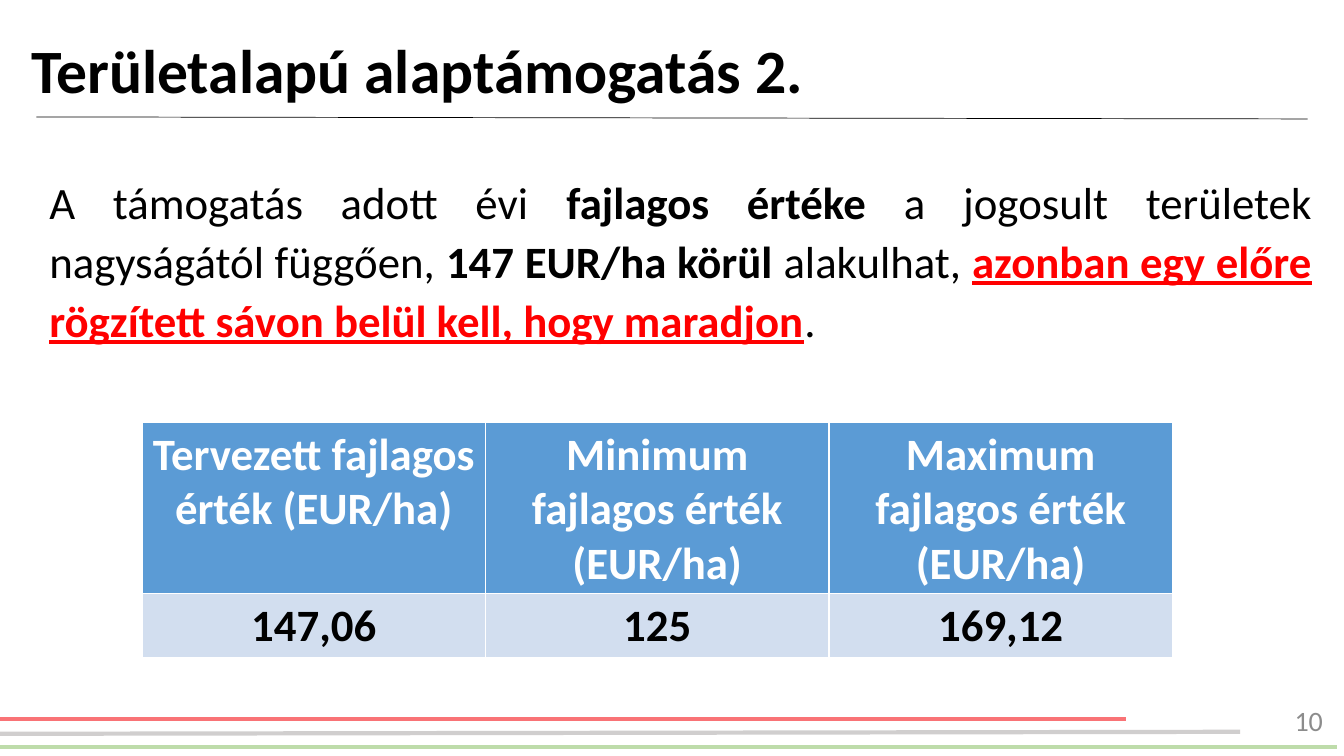
from typing import Any, NamedTuple

import lxml.etree
import pptx
import pptx.dml.color
import pptx.enum.shapes
import pptx.enum.text
import pptx.oxml.ns
import pptx.util
from pptx.util import Inches

COLORS = {
    "black": "000000", "white": "FFFFFF", "red": "FF0000", "grey": "8C8C8C",
    "red_stripe": "F97376", "green_stripe": "BEDCAA", "grey_stripe": "D0CECE",
    "header": "5B9BD5", "value": "D2DEEF",
}
ALIGN = pptx.enum.text.PP_ALIGN
ANCHOR = pptx.enum.text.MSO_ANCHOR


class Rule(NamedTuple):
    start: tuple[float, float]
    end: tuple[float, float]
    color: str
    width: float


class Run(NamedTuple):
    text: str
    size: float
    color: str = "black"
    bold: bool = False
    underline: bool = False


RULES = [
    Rule((0, 7.13), (11.17, 7.13), "red_stripe", 3),
    Rule((0, 7.41), (13.26, 7.41), "green_stripe", 3),
    Rule((0, 7.28), (12.3, 7.26), "grey_stripe", 3),
    Rule((0.36, 1.16), (12.97, 1.18), "black", 0.5),
]
BODY_RUNS = [
    Run("A támogatás adott évi ", 32),
    Run("fajlagos értéke ", 32, bold=True),
    Run("a jogosult területek nagyságától függően, ", 32),
    Run("147 EUR/ha körül", 32, bold=True),
    Run(" alakulhat, ", 32),
    Run("azonban egy előre rögzített sávon belül kell, hogy maradjon", 32, "red", True, True),
    Run(".", 32),
]
TABLE_ROWS = [
    ["Tervezett fajlagos érték (EUR/ha)", "Minimum fajlagos érték (EUR/ha)",
     "Maximum fajlagos érték (EUR/ha)"],
    ["147,06", "125", "169,12"],
]
ROW_HEIGHTS = [1.7, 0.63]
ROW_STYLES = [("header", "white"), ("value", "black")]


def rgb(name: str) -> pptx.dml.color.RGBColor:
    return pptx.dml.color.RGBColor.from_string(COLORS[name])


def apply(target: Any, values: dict[str, Any]) -> None:
    for name, value in values.items():
        setattr(target, name, value)


def write(text_frame: Any, runs: list[Run], paragraph_format: dict[str, Any]) -> None:
    paragraph = text_frame.paragraphs[0]
    apply(paragraph, paragraph_format)
    for item in runs:
        run = paragraph.add_run()
        run.text = item.text
        apply(run.font, {"name": "Calibri", "size": pptx.util.Pt(item.size),
                         "bold": item.bold, "underline": item.underline})
        run.font.color.rgb = rgb(item.color)


def draw_rule(slide: Any, rule: Rule) -> None:
    connector = slide.shapes.add_connector(
        pptx.enum.shapes.MSO_CONNECTOR.STRAIGHT,
        *(Inches(value) for value in rule.start + rule.end))
    connector.line.color.rgb = rgb(rule.color)
    connector.line.width = pptx.util.Pt(rule.width)
    lxml.etree.SubElement(connector._element.spPr, pptx.oxml.ns.qn("a:effectLst"))


def add_title(slide: Any, text: str) -> None:
    title = slide.shapes.title
    apply(title, {"left": Inches(0.21), "top": Inches(0),
                  "width": Inches(13), "height": Inches(1.45)})
    apply(title.text_frame, {"vertical_anchor": ANCHOR.MIDDLE, "word_wrap": True,
                             "auto_size": pptx.enum.text.MSO_AUTO_SIZE.NONE})
    write(title.text_frame, [Run(text, 44, bold=True)],
          {"alignment": ALIGN.LEFT, "line_spacing": 0.9})


def add_text(slide: Any, box: tuple[float, float, float, float], runs: list[Run],
             anchor: Any, paragraph_format: dict[str, Any]) -> None:
    shape = slide.shapes.add_textbox(*(Inches(value) for value in box))
    apply(shape.text_frame, {"word_wrap": True, "vertical_anchor": anchor})
    write(shape.text_frame, runs, paragraph_format)


def add_value_table(slide: Any) -> None:
    table = slide.shapes.add_table(
        len(TABLE_ROWS), len(TABLE_ROWS[0]), Inches(1.41), Inches(4.19),
        Inches(10.22), Inches(sum(ROW_HEIGHTS))).table
    for row, texts, height, (fill, color) in zip(
            table.rows, TABLE_ROWS, ROW_HEIGHTS, ROW_STYLES):
        row.height = Inches(height)
        for cell, text in zip(row.cells, texts):
            cell.fill.solid()
            cell.fill.fore_color.rgb = rgb(fill)
            write(cell.text_frame, [Run(text, 32, color, True)], {"alignment": ALIGN.CENTER})


def main() -> None:
    presentation = pptx.Presentation()
    apply(presentation, {"slide_width": Inches(13.33), "slide_height": Inches(7.5)})
    slide = presentation.slides.add_slide(presentation.slide_layouts[5])
    for rule in RULES:
        draw_rule(slide, rule)
    add_title(slide, "Területalapú alaptámogatás 2.")
    add_text(slide, (0.39, 1.63, 12.72, 5.41), BODY_RUNS, ANCHOR.TOP,
             {"alignment": ALIGN.JUSTIFY, "line_spacing": 1.1,
              "space_after": pptx.util.Pt(3)})
    add_text(slide, (10.22, 6.95, 3, 0.4), [Run("10", 20, "grey")], ANCHOR.MIDDLE,
             {"alignment": ALIGN.RIGHT})
    add_value_table(slide)
    presentation.save("out.pptx")


if __name__ == "__main__":
    main()
